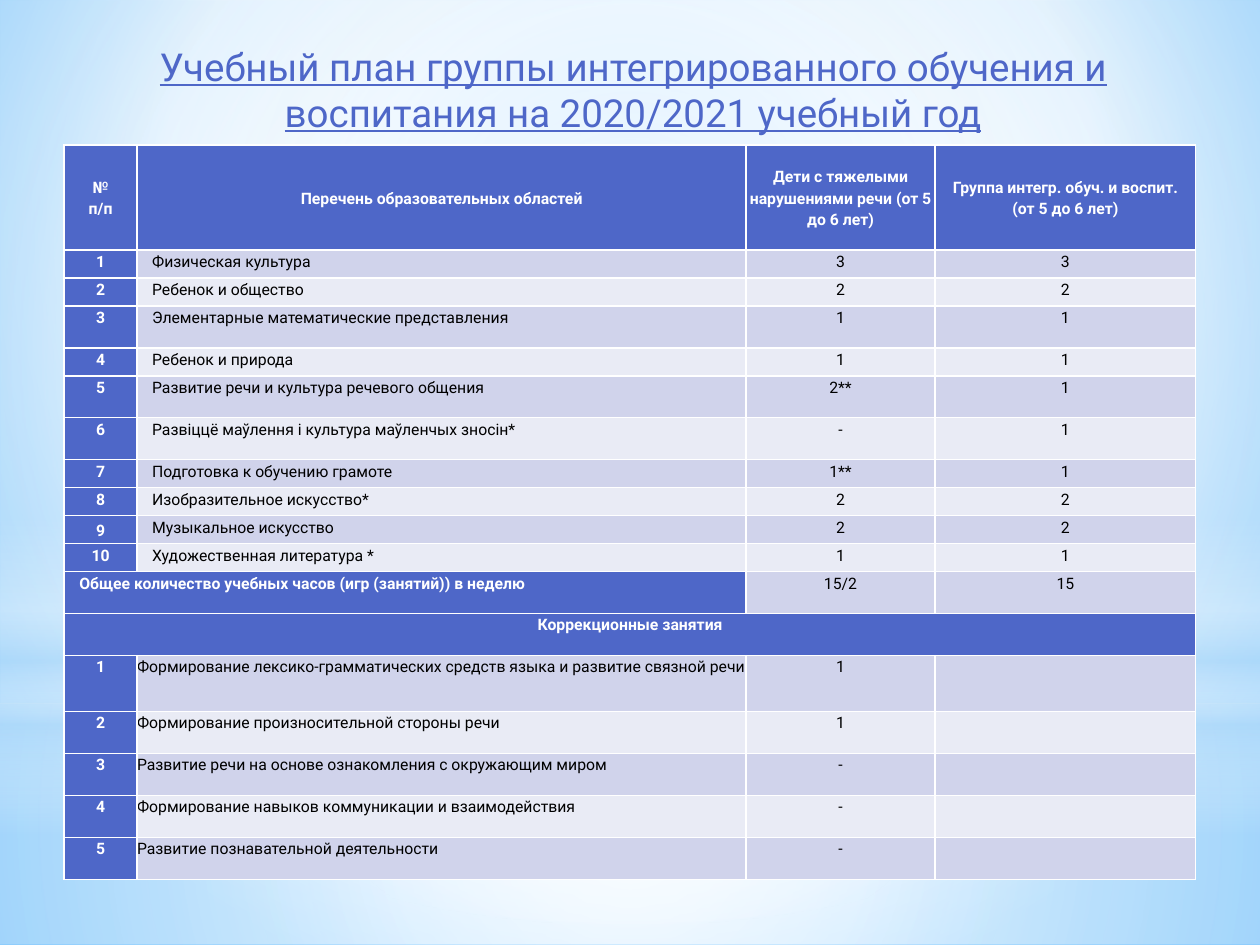
from dataclasses import dataclass

from lxml import etree
from pptx import Presentation
from pptx.dml.color import RGBColor
from pptx.enum.shapes import MSO_SHAPE as Preset
from pptx.enum.text import MSO_ANCHOR as Anchor, MSO_AUTO_SIZE as AutoSize, PP_ALIGN as Align
from pptx.oxml.ns import qn
from pptx.util import Pt


@dataclass(frozen=True)
class Theme:
    font: str = "Roboto"
    title_size: float = 22
    table_size: float = 9
    accent: str = "4E67C8"
    ink: str = "000000"
    white: str = "FFFFFF"
    sky: str = "B4DCFA"
    bands: tuple = ("E9EBF5", "D0D3EB")
    backdrop: tuple = ((0, "9ED5FF", 100), (60, "FFFFFF", 100), (100, "5BB9FF", 100))


@dataclass(frozen=True)
class Box:
    left: float
    top: float
    width: float
    height: float

    def lengths(self):
        return [Pt(side) for side in (self.left, self.top, self.width, self.height)]


THEME = Theme()
CENTER = (50, 50, 50, 50)
COLUMNS = (41.6, 348, 108, 149)
SHORT, TALL = 16, 24
HEADER = (
    "№\nп/п",
    "Перечень образовательных областей",
    "Дети с тяжелыми нарушениями речи (от 5 до 6 лет)",
    "Группа интегр. обуч. и воспит.\n(от 5 до 6 лет)",
)
SUBJECTS = (
    ("Физическая культура", "3", "3", SHORT),
    ("Ребенок и общество", "2", "2", SHORT),
    ("Элементарные математические представления", "1", "1", TALL),
    ("Ребенок и природа", "1", "1", SHORT),
    ("Развитие речи и культура речевого общения", "2**", "1", TALL),
    ("Развіццё маўлення і культура маўленчых зносін*", "-", "1", TALL),
    ("Подготовка к обучению грамоте", "1**", "1", SHORT),
    ("Изобразительное искусство*", "2", "2", SHORT),
    ("Музыкальное искусство", "2", "2", SHORT),
    ("Художественная литература *", "1", "1", SHORT),
)
TOTAL = ("Общее количество учебных часов (игр (занятий)) в неделю", "", "15/2", "15")
SECTION = ("Коррекционные занятия", "", "", "")
LESSONS = (
    ("Формирование лексико-грамматических средств языка и развитие связной речи", "1", "", 32),
    ("Формирование произносительной стороны речи", "1", "", TALL),
    ("Развитие речи на основе ознакомления с окружающим миром", "-", "", TALL),
    ("Формирование навыков коммуникации и взаимодействия", "-", "", TALL),
    ("Развитие познавательной деятельности", "-", "", TALL),
)


def paint_gradient(element, stops, focus=None):
    gradient = etree.Element(qn("a:gradFill"), rotWithShape="1")
    stop_list = etree.SubElement(gradient, qn("a:gsLst"))
    for place, color, opacity in stops:
        stop = etree.SubElement(stop_list, qn("a:gs"), pos=str(place * 1000))
        tint = etree.SubElement(stop, qn("a:srgbClr"), val=color)
        if opacity < 100:
            etree.SubElement(tint, qn("a:alpha"), val=str(opacity * 1000))
    if focus:
        circle = etree.SubElement(gradient, qn("a:path"), path="circle")
        sides = {side: str(share * 1000) for side, share in zip("ltrb", focus)}
        etree.SubElement(circle, qn("a:fillToRect"), **sides)
    else:
        etree.SubElement(gradient, qn("a:lin"), ang="5400000", scaled="0")
    solid = next(element.iter(qn("a:solidFill")))
    solid.getparent().replace(solid, gradient)


def write(frame, text, *, size, color, bold=False, underline=False,
          align=Align.CENTER, spacing=1.0, after=0):
    for index, line in enumerate(text.split("\n")):
        para = frame.add_paragraph() if index else frame.paragraphs[0]
        para.alignment = align
        para.line_spacing = spacing
        para.space_after = Pt(after)
        if not line:
            etree.SubElement(para._p, qn("a:endParaRPr"), sz=str(int(size * 100)))
            continue
        span = para.add_run()
        span.text = line
        span.font.name = THEME.font
        span.font.size = Pt(size)
        span.font.bold = bold
        span.font.underline = underline
        span.font.color.rgb = RGBColor.from_string(color)


def add_backdrop(page, box):
    page.background.fill.solid()
    paint_gradient(page.element, THEME.backdrop, (20, 10, 20, 60))
    white, sky = THEME.white, THEME.sky
    horizon = 402
    layers = (
        (Preset.RECTANGLE, horizon, box.height - horizon,
         ((0, white, 91), (37, white, 76), (100, sky, 79)), CENTER),
        (Preset.RECTANGLE, 0, horizon,
         ((0, white, 89), (48, white, 62), (100, sky, 79)), CENTER),
        (Preset.RECTANGLE, 296.6, 180,
         ((0, white, 0), (29, white, 30), (45, sky, 40),
          (55, white, 26), (65, sky, 60), (100, white, 0)), None),
        (Preset.OVAL, 126, horizon, ((0, white, 100), (56, white, 0)), CENTER),
    )
    for preset, top, height, stops, focus in layers:
        area = Box(box.left, box.top + top, box.width, height)
        shape = page.shapes.add_shape(preset, *area.lengths())
        shape.shadow.inherit = False
        shape.line.fill.background()
        shape.fill.solid()
        paint_gradient(shape.element, stops, focus)


def add_title(page, box, text):
    title = page.shapes.title
    title.left, title.top, title.width, title.height = box.lengths()
    frame = title.text_frame
    frame.word_wrap = True
    frame.auto_size = AutoSize.NONE
    frame.vertical_anchor = Anchor.TOP
    frame.margin_left = Pt(10.8)
    write(frame, text, size=THEME.title_size, color=THEME.accent, underline=True, after=3)
    title.element.getparent().append(title.element)


def fill_cell(cell, text, *, fill, color, bold, align=Align.CENTER,
              anchor=Anchor.TOP, indent=0, after=0):
    cell.fill.solid()
    cell.fill.fore_color.rgb = RGBColor.from_string(fill)
    cell.margin_left = Pt(indent)
    cell.margin_right = cell.margin_top = cell.margin_bottom = 0
    cell.vertical_anchor = anchor
    write(cell.text_frame, text, size=THEME.table_size, color=color, bold=bold,
          align=align, spacing=1.15, after=after)


def add_plan(page, box):
    numbered = [[(str(number), *entry[:3]) for number, entry in enumerate(group, 1)]
                for group in (SUBJECTS, LESSONS)]
    rows = [HEADER, *numbered[0], TOTAL, SECTION, *numbered[1]]
    heights = [60, *(entry[3] for entry in SUBJECTS), TALL, TALL,
               *(entry[3] for entry in LESSONS)]
    total = rows.index(TOTAL)
    section = rows.index(SECTION)
    table = page.shapes.add_table(len(rows), len(COLUMNS), *box.lengths()).table
    for column, width in zip(table.columns, COLUMNS):
        column.width = Pt(width)
    for row, height in zip(table.rows, heights):
        row.height = Pt(height)
    table.cell(total, 0).merge(table.cell(total, 1))
    table.cell(section, 0).merge(table.cell(section, 3))
    for r, row in enumerate(rows):
        for c, text in enumerate(row):
            dark = r in (0, section) or c == 0
            summary = r == total and c == 0
            subject = 0 < r < total and c == 1
            style = dict(
                fill=THEME.accent if dark else THEME.bands[r % 2],
                color=THEME.white if dark else THEME.ink,
                bold=dark,
                anchor=Anchor.MIDDLE if r == 0 or text == "9" else Anchor.TOP,
            )
            if summary or subject:
                style.update(align=Align.JUSTIFY, indent=8.64)
            elif r > section and c == 1:
                style.update(align=Align.LEFT)
            if r not in (0, section) and text != "9" and (c == 0 or subject):
                style.update(after=1.4)
            fill_cell(table.cell(r, c), text, **style)


def main():
    deck = Presentation()
    deck.slide_width, deck.slide_height = Pt(720), Pt(540)
    page = deck.slides.add_slide(deck.slide_layouts[5])
    add_backdrop(page, Box(0, 0, 720, 540))
    add_title(page, Box(36.7, 20.9, 646.6, 481.7),
              "Учебный план группы интегрированного обучения и воспитания на 2020/2021 учебный год")
    add_plan(page, Box(36.7, 82.8, sum(COLUMNS), 420))
    deck.save("out.pptx")


if __name__ == "__main__":
    main()
